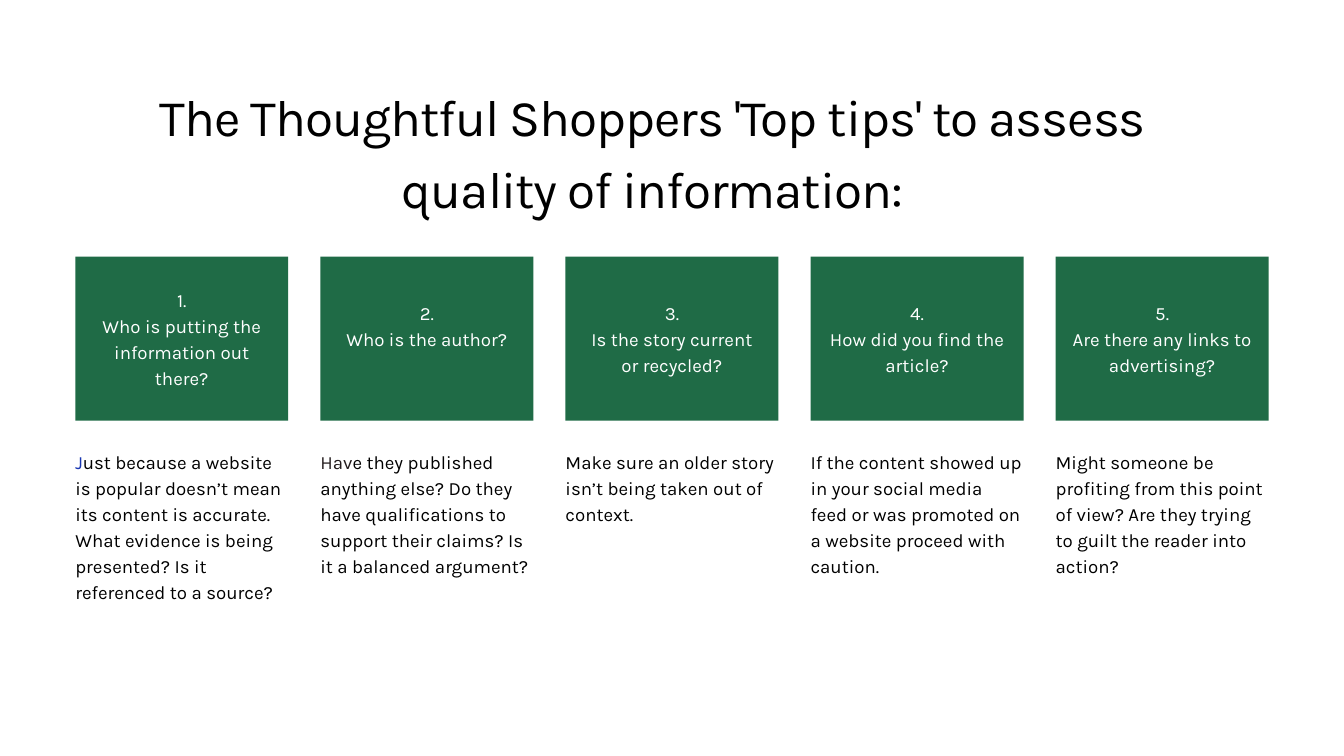
import dataclasses

import pptx
import pptx.dml.color
import pptx.enum.shapes
import pptx.enum.text
import pptx.util

Pt = pptx.util.Pt
RGBColor = pptx.dml.color.RGBColor
Align = pptx.enum.text.PP_ALIGN

GREEN = RGBColor(0x1F, 0x6B, 0x46)
WHITE = RGBColor(0xFF, 0xFF, 0xFF)
BLACK = RGBColor(0x00, 0x00, 0x00)
BLUE = RGBColor(0x18, 0x36, 0xB2)
CHARCOAL = RGBColor(0x22, 0x1B, 0x1C)

FONT = "Karla"
CARD_LEFT = 80.7
CARD_PITCH = 262.6
CARD_TOP = 275
CARD_WIDTH = 228.2
CARD_HEIGHT = 175.7
QUESTION_INDENT = 17.8
QUESTION_WIDTH = 192.5
ADVICE_TOP = 478.6
LINE_HEIGHT = 28


@dataclasses.dataclass(frozen=True)
class Tip:
    question: str
    question_lines: int
    advice: tuple[str, ...]
    advice_lines: int
    lead: str = ""
    lead_color: RGBColor = BLACK


TIPS = (
    Tip(
        "Who is putting the information out there?", 3,
        (
            "ust because a website is popular doesn’t mean its content is accurate.",
            "What evidence is being presented? Is it referenced to a source?",
        ),
        6, "J", BLUE,
    ),
    Tip(
        "Who is the author?", 1,
        ("e they published anything else? Do they have qualifications to "
         "support their claims? Is it a balanced argument?",),
        5, "Hav", CHARCOAL,
    ),
    Tip(
        "Is the story current or recycled?", 2,
        ("Make sure an older story isn’t being taken out of context.",), 3,
    ),
    Tip(
        "How did you find the article?", 2,
        ("If the content showed up in your social media feed or was promoted "
         "on a website proceed with caution.",),
        5,
    ),
    Tip(
        "Are there any links to advertising?", 2,
        ("Might someone be profiting from this point of view? Are they trying "
         "to guilt the reader into action?",),
        5,
    ),
)


def format_frame(frame: pptx.text.text.TextFrame) -> None:
    frame.word_wrap = True
    frame.auto_size = pptx.enum.text.MSO_AUTO_SIZE.NONE
    frame.vertical_anchor = pptx.enum.text.MSO_ANCHOR.TOP
    frame.margin_left = frame.margin_top = Pt(0)
    frame.margin_right = frame.margin_bottom = Pt(0)


def format_paragraph(
    paragraph: pptx.text.text._Paragraph,
    size: float,
    line_height: float,
    color: RGBColor,
    alignment: Align,
) -> None:
    paragraph.alignment = alignment
    paragraph.line_spacing = Pt(line_height)
    paragraph.space_before = Pt(0)
    paragraph.font.size = Pt(size)
    paragraph.font.name = FONT
    paragraph.font.color.rgb = color


def add_title(slide: pptx.slide.Slide, text: str) -> None:
    title = slide.shapes.title
    title.left, title.top = Pt(125.3), Pt(80)
    title.width, title.height = Pt(1147.7), Pt(149)
    format_frame(title.text_frame)
    title.text_frame.text = text
    paragraph = title.text_frame.paragraphs[0]
    format_paragraph(paragraph, 55, 77, BLACK, Align.CENTER)
    paragraph.runs[0]._r.get_or_add_rPr().set("spc", "-110")


def add_text(
    slide: pptx.slide.Slide,
    left: float,
    top: float,
    width: float,
    lines: int,
    texts: tuple[str, ...],
    color: RGBColor,
    alignment: Align,
) -> pptx.text.text.TextFrame:
    box = slide.shapes.add_textbox(
        Pt(left), Pt(top), Pt(width), Pt(lines * LINE_HEIGHT)
    )
    frame = box.text_frame
    format_frame(frame)
    frame.text = "\n".join(texts)
    for paragraph in frame.paragraphs:
        format_paragraph(paragraph, 20, LINE_HEIGHT, color, alignment)
    return frame


def add_tip(slide: pptx.slide.Slide, index: int, tip: Tip) -> None:
    left = CARD_LEFT + index * CARD_PITCH
    card = slide.shapes.add_shape(
        pptx.enum.shapes.MSO_SHAPE.RECTANGLE,
        Pt(left), Pt(CARD_TOP), Pt(CARD_WIDTH), Pt(CARD_HEIGHT),
    )
    card.shadow.inherit = False
    card.fill.solid()
    card.fill.fore_color.rgb = GREEN
    card.line.fill.background()

    question_top = 305.2 if tip.question_lines == 3 else 319.3
    add_text(
        slide, left + QUESTION_INDENT, question_top, QUESTION_WIDTH,
        tip.question_lines + 1, (f"{index + 1}.", tip.question),
        WHITE, Align.CENTER,
    )

    first, *others = tip.advice
    frame = add_text(
        slide, left, ADVICE_TOP, CARD_WIDTH, tip.advice_lines,
        (tip.lead or first, *others), BLACK, Align.LEFT,
    )
    if tip.lead:
        paragraph = frame.paragraphs[0]
        paragraph.runs[0].font.color.rgb = tip.lead_color
        paragraph.add_run().text = first


def main() -> None:
    presentation = pptx.Presentation()
    presentation.slide_width = Pt(1440)
    presentation.slide_height = Pt(810)
    slide = presentation.slides.add_slide(presentation.slide_layouts[5])
    add_title(
        slide,
        "The Thoughtful Shoppers 'Top tips' to assess quality of information:",
    )
    for index, tip in enumerate(TIPS):
        add_tip(slide, index, tip)
    presentation.save("out.pptx")


if __name__ == "__main__":
    main()
